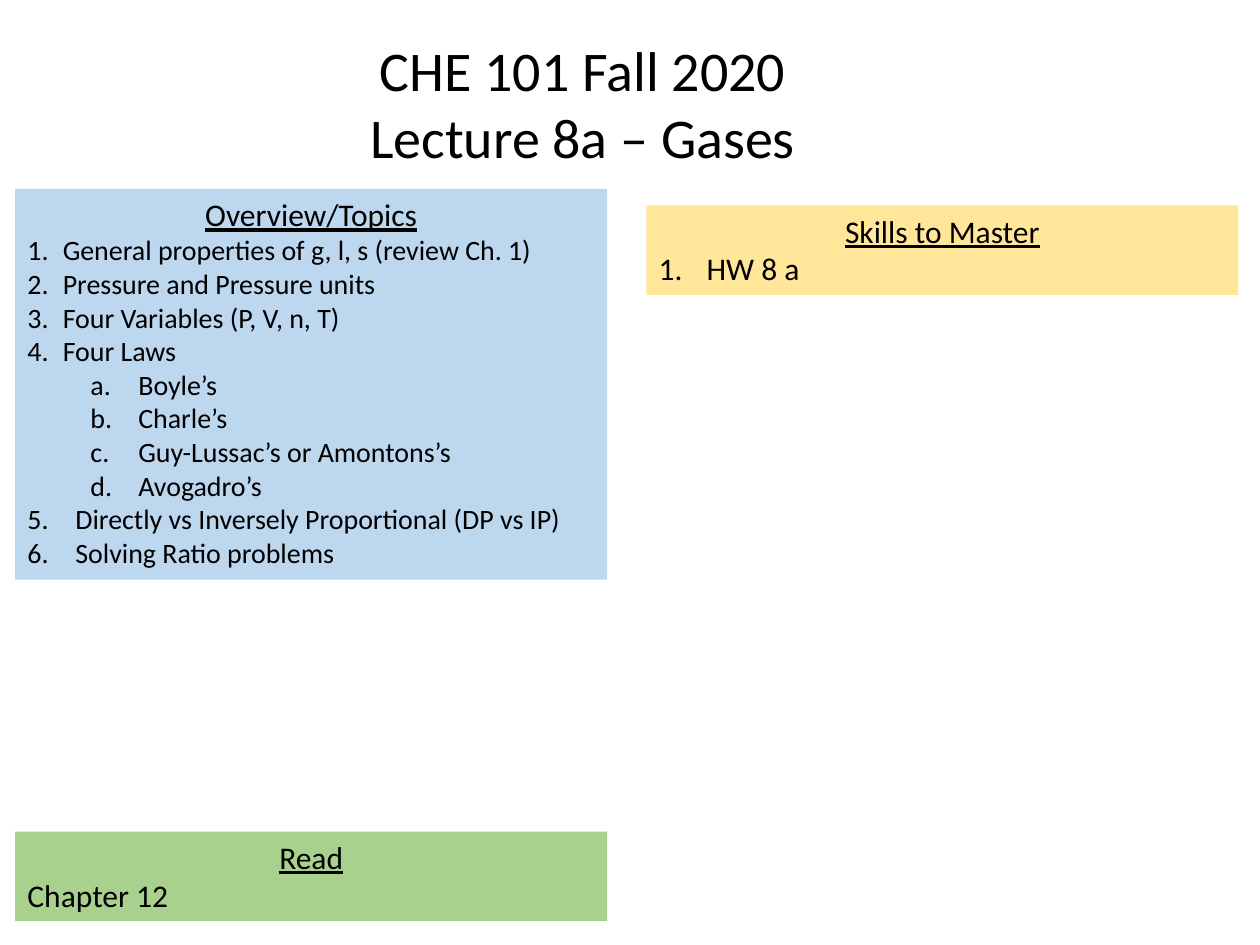
from pptx import Presentation
from pptx.dml.color import RGBColor
from pptx.enum.shapes import MSO_SHAPE
from pptx.enum.text import MSO_ANCHOR, MSO_AUTO_SIZE, PP_ALIGN
from pptx.oxml.ns import qn
from pptx.util import Inches, Pt
from lxml import etree

RECTANGLE = MSO_SHAPE.RECTANGLE
TOP = MSO_ANCHOR.TOP
GROW = MSO_AUTO_SIZE.SHAPE_TO_FIT_TEXT
LEFT, CENTER = PP_ALIGN.LEFT, PP_ALIGN.CENTER

BLACK = RGBColor(0x00, 0x00, 0x00)
BLUE = RGBColor(0xBD, 0xD7, 0xEE)
YELLOW = RGBColor(0xFF, 0xE6, 0x99)
GREEN = RGBColor(0xA9, 0xD1, 0x8E)
FONT = "Calibri"

# List styles: outline level, left margin, hanging indent, numbering
TIGHT = (0, 0.28, 0.28, "arabicPeriod")
WIDE = (0, 0.38, 0.38, "arabicPeriod")
LETTERED = (1, 0.88, 0.38, "alphaLcPeriod")

# Content
TITLE = ["CHE 101 Fall 2020", "Lecture 8a – Gases"]
TOPICS = [
    ("General properties of g, l, s (review Ch. 1)", TIGHT),
    ("Pressure and Pressure units", TIGHT),
    ("Four Variables (P, V, n, T)", TIGHT),
    ("Four Laws", TIGHT),
    ("Boyle’s", LETTERED),
    ("Charle’s", LETTERED),
    ("Guy-Lussac’s or Amontons’s", LETTERED),
    ("Avogadro’s", LETTERED),
    ("Directly vs Inversely Proportional (DP vs IP)", WIDE),
    ("Solving Ratio problems", WIDE),
]

# Panels: heading, column, top, height, fill, body size, body lines
COLUMN_LEFTS = (0.12, 5.13)
PANEL_WIDTH = 4.7
PANELS = [
    ("Overview/Topics", 0, 1.5, 3.1, BLUE, 16, TOPICS),
    ("Skills to Master", 1, 1.63, 0.71, YELLOW, 18, [("HW 8 a", WIDE)]),
    ("Read", 0, 6.6, 0.71, GREEN, 18, [("Chapter 12", None)]),
]


def write_line(frame, text, size=18, align=LEFT, underline=False, numbering=None):
    """Fill the empty first paragraph of the frame, or add a new one."""
    first = frame.paragraphs[0]
    paragraph = frame.add_paragraph() if first.runs else first
    paragraph.alignment = align
    if numbering:
        level, margin, hanging, scheme = numbering
        paragraph.level = level
        properties = paragraph._p.get_or_add_pPr()
        properties.set("marL", str(Inches(margin)))
        properties.set("indent", str(-Inches(hanging)))
        etree.SubElement(properties, qn("a:buFont")).set("typeface", "+mj-lt")
        etree.SubElement(properties, qn("a:buAutoNum")).set("type", scheme)
    run = paragraph.add_run()
    run.text = text
    run.font.name = FONT
    run.font.size = Pt(size)
    run.font.color.rgb = BLACK
    run.font.underline = underline


presentation = Presentation()
presentation.slide_width, presentation.slide_height = Inches(10), Inches(7.5)
slide = presentation.slides.add_slide(presentation.slide_layouts[6])

# Coloured panels
for heading, column, top, height, fill, size, lines in PANELS:
    shape = slide.shapes.add_shape(
        RECTANGLE, Inches(COLUMN_LEFTS[column]), Inches(top),
        Inches(PANEL_WIDTH), Inches(height))
    shape.shadow.inherit = False
    shape.fill.solid()
    shape.fill.fore_color.rgb = fill
    shape.line.fill.background()
    frame = shape.text_frame
    frame.word_wrap = True
    frame.vertical_anchor = TOP
    frame.auto_size = GROW
    write_line(frame, heading, align=CENTER, underline=True)
    for text, numbering in lines:
        write_line(frame, text, size=size, numbering=numbering)

# Title
title = slide.shapes.add_textbox(Inches(2.82), Inches(0.23), Inches(3.61), Inches(1.18))
title.text_frame.word_wrap = False
title.text_frame.auto_size = GROW
for text in TITLE:
    write_line(title.text_frame, text, size=32, align=CENTER)

presentation.save("out.pptx")
